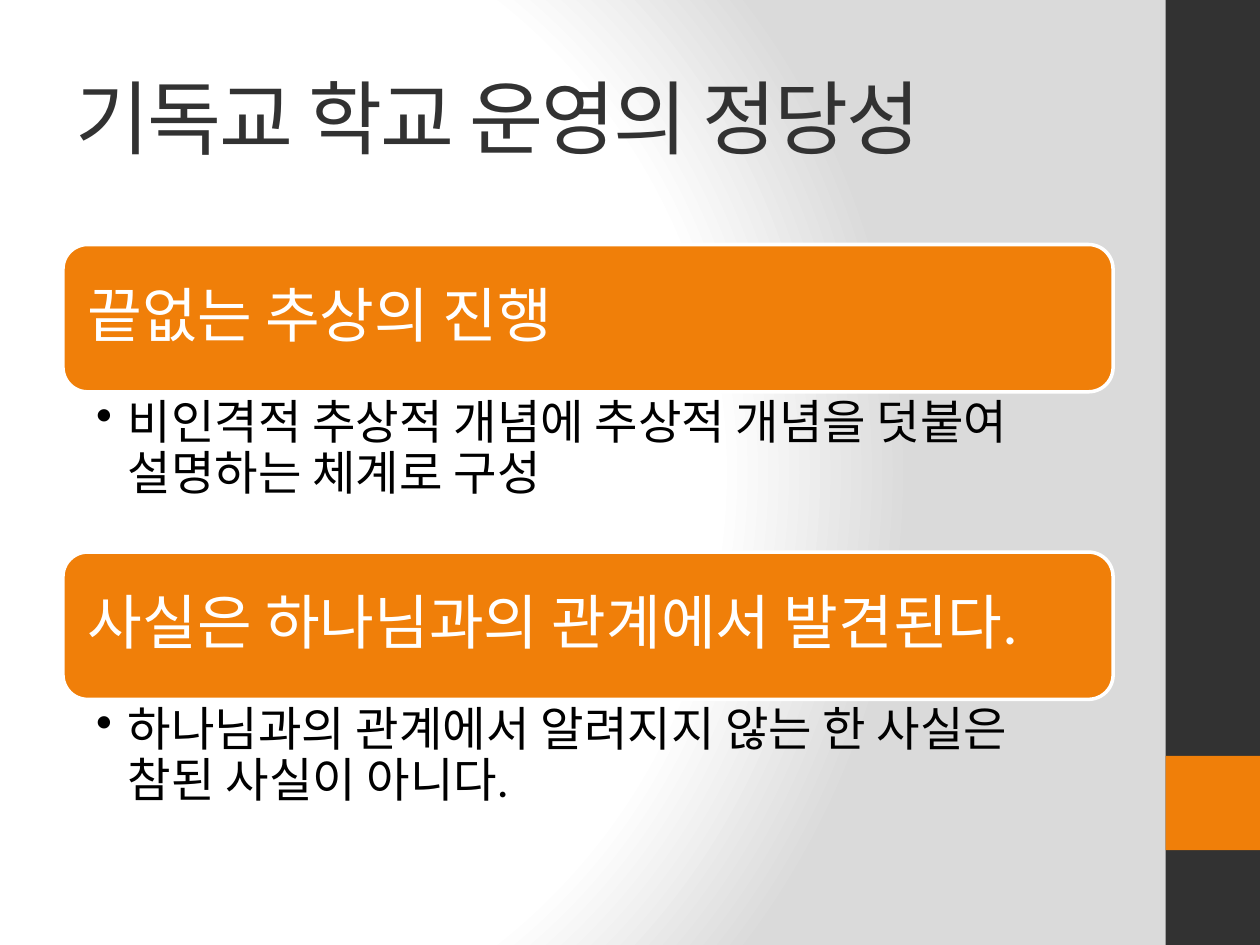
from dataclasses import dataclass

from lxml import etree
from pptx import Presentation, util as u
from pptx.dml.color import RGBColor
from pptx.enum import shapes as sh, text as tx
from pptx.oxml import parse_xml
from pptx.oxml.ns import nsdecls, qn

DARK, ORANGE, WHITE, BLACK = "323232", "F07F09", "FFFFFF", "000000"
LEFT, WIDTH = 1.27, 21.17
TOP, HEAD_H, BODY_H = 4.93, 2.97, 3.23


@dataclass
class Point:
    head: str
    body: str


POINTS = [
    Point("끝없는 추상의 진행",
          "비인격적 추상적 개념에 추상적 개념을 덧붙여 설명하는 체계로 구성"),
    Point("사실은 하나님과의 관계에서 발견된다.",
          "하나님과의 관계에서 알려지지 않는 한 사실은 참된 사실이 아니다."),
]


def color(code: str) -> RGBColor:
    return RGBColor.from_string(code)


def box(slide, kind, left: float, top: float, width: float, height: float,
        fill: str, line: str = ""):
    shape = slide.shapes.add_shape(
        kind, u.Cm(left), u.Cm(top), u.Cm(width), u.Cm(height))
    shape.shadow.inherit = False
    shape.fill.solid()
    shape.fill.fore_color.rgb = color(fill)
    if line:
        shape.line.color.rgb = color(line)
        shape.line.width = u.Pt(2)
    else:
        shape.line.fill.background()
    return shape


def write(shape, words: str, *, size: float, font: str = "Calibri",
          ink: str = BLACK, anchor=tx.MSO_ANCHOR.MIDDLE,
          pad: tuple = (0.25, 0.13), lines: float = 0.9, after: float = 0,
          bullet: bool = False, track: int = 0) -> None:
    frame = shape.text_frame
    frame.word_wrap = True
    frame.auto_size = tx.MSO_AUTO_SIZE.NONE
    frame.vertical_anchor = anchor
    frame.margin_left = frame.margin_right = u.Cm(pad[0])
    frame.margin_top = frame.margin_bottom = u.Cm(pad[1])
    para = frame.paragraphs[0]
    para.alignment = tx.PP_ALIGN.LEFT
    para.line_spacing = lines
    para.space_after = u.Pt(round(size * after))
    run = para.add_run()
    run.text = words
    run.font.size = u.Pt(size)
    run.font.name = font
    run.font.color.rgb = color(ink)
    if track:
        run.font._element.set("spc", str(track))
    if bullet:
        props = para._p.get_or_add_pPr()
        props.set("marL", str(u.Cm(0.64)))
        props.set("indent", str(-u.Cm(0.64)))
        etree.SubElement(props, qn("a:buChar")).set("char", "•")


def backdrop(slide) -> None:
    """Round gradient, white fading to grey."""
    slide.background.fill.gradient()
    old = slide.element.find(".//" + qn("a:gradFill"))
    stops = "".join(
        f'<a:gs pos="{pos * 1000}"><a:srgbClr val="{code}"/></a:gs>'
        for pos, code in ((0, WHITE), (75, WHITE), (100, "DADADA")))
    new = parse_xml(
        f'<a:gradFill {nsdecls("a")} rotWithShape="1"><a:gsLst>{stops}</a:gsLst>'
        '<a:path path="circle"><a:fillToRect l="20000" t="50000" r="100000" '
        'b="50000"/></a:path></a:gradFill>')
    old.getparent().replace(old, new)


def main() -> None:
    deck = Presentation()
    deck.slide_width, deck.slide_height = u.Cm(25.4), u.Cm(19.05)
    slide = deck.slides.add_slide(deck.slide_layouts[5])
    backdrop(slide)

    # Side band with its accent
    rect = sh.MSO_SHAPE.RECTANGLE
    box(slide, rect, 23.5, 0, 1.9, 19.05, DARK)
    box(slide, rect, 23.5, 15.24, 1.9, 1.9, ORANGE)

    # Title
    title = slide.shapes.title
    title.left, title.top = u.Cm(LEFT), u.Cm(0.76)
    title.width, title.height = u.Cm(WIDTH), u.Cm(3.18)
    write(title, "기독교 학교 운영의 정당성", size=46, font="Cambria",
          ink=DARK, lines=1, track=-100)

    # Headed points, stacked without gaps
    for i, point in enumerate(POINTS):
        top = TOP + i * (HEAD_H + BODY_H)
        head = box(slide, sh.MSO_SHAPE.ROUNDED_RECTANGLE,
                   LEFT, top, WIDTH, HEAD_H, ORANGE, WHITE)
        write(head, point.head, size=34, ink=WHITE, pad=(0.36, 0.36), after=0.35)
        body = slide.shapes.add_textbox(
            u.Cm(LEFT), u.Cm(top + HEAD_H), u.Cm(WIDTH), u.Cm(BODY_H))
        write(body, point.body, size=27, anchor=tx.MSO_ANCHOR.TOP,
              pad=(0.67, 0.13), after=0.2, bullet=True)

    deck.save("out.pptx")


if __name__ == "__main__":
    main()
